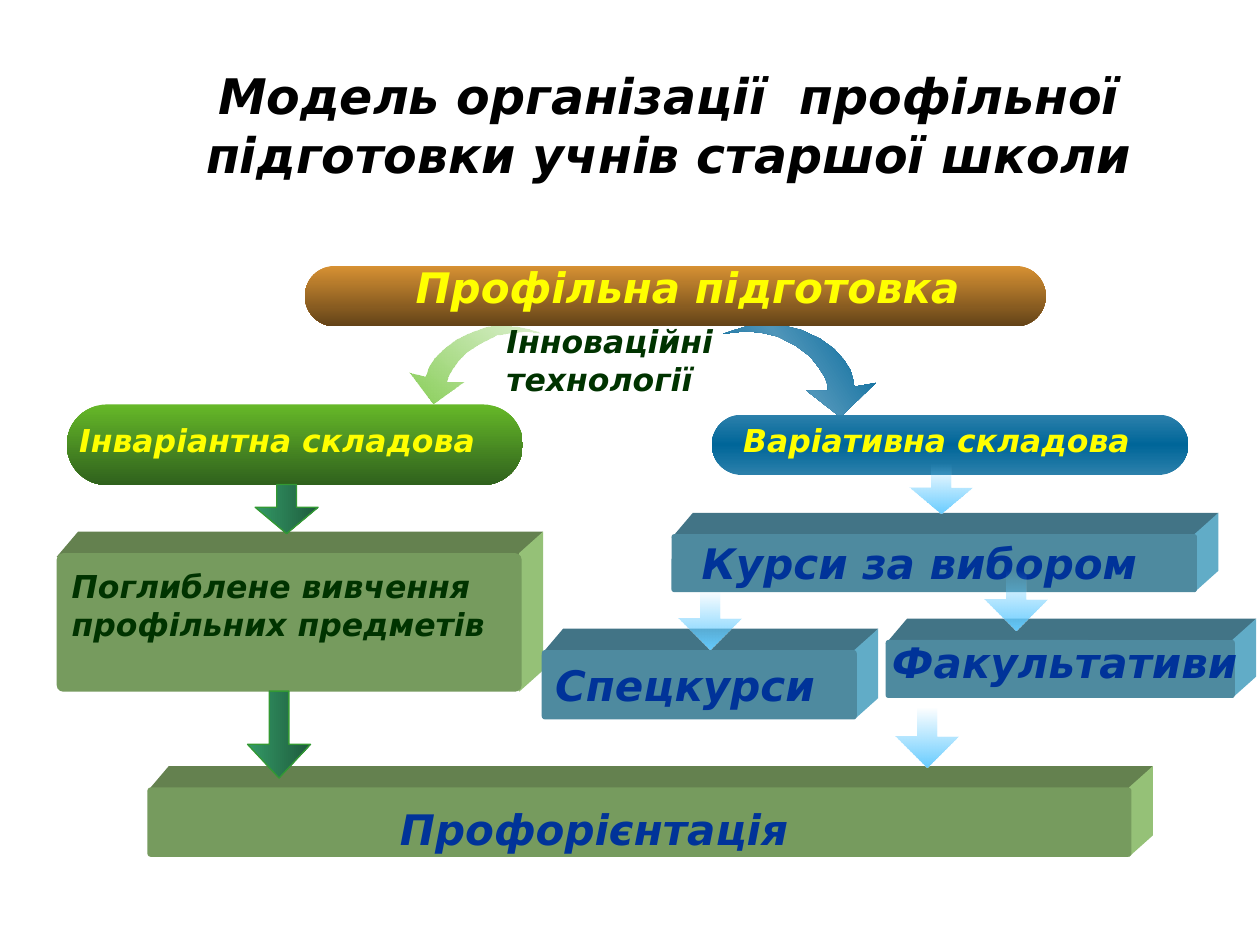
from dataclasses import dataclass
from typing import Optional

from lxml.etree import SubElement
from pptx import Presentation
from pptx.dml.color import RGBColor
from pptx.enum.shapes import MSO_SHAPE
from pptx.enum.text import MSO_ANCHOR, MSO_AUTO_SIZE, PP_ALIGN
from pptx.oxml.ns import qn
from pptx.util import Cm, Pt

CM_PER_UNIT = 2.54
DEPTH = 0.17
YELLOW, NAVY, FOREST = "FFFF00", "003399", "003300"
FONT = {"name": "DejaVu Sans", "bold": True, "italic": True}


@dataclass
class Gradient:
    stops: list
    angle: float


@dataclass
class Palette:
    front: str
    top: str
    side: str


@dataclass
class Block:
    area: tuple
    palette: Palette
    text: str = ""


@dataclass
class Pill:
    area: tuple
    fill: Gradient


@dataclass
class Label:
    area: tuple
    lines: list
    size: int
    color: str
    wrap: bool = False
    align: PP_ALIGN = PP_ALIGN.LEFT


@dataclass
class Arrow:
    area: tuple
    fill: Gradient
    outline: Optional[str] = None


@dataclass
class Curve:
    points: list
    fill: Gradient


GREEN = Palette("769B5E", "64814F", "95C177")
BLUE = Palette("4E8A9F", "427486", "61ACC7")
DARK_ARROW = Gradient([(0, "339966", 100), (100, "1E5B3D", 100)], 90)
LIGHT_ARROW = Gradient([(0, "66CCFF", 100), (100, "66CCFF", 0)], 0)

GUIDANCE = Block((1.17, 6.25, 7.81, 0.55), GREEN)
DEEP_STUDY = Block((0.45, 4.39, 3.69, 1.1), GREEN)
FACULTATIVE = Block((7.03, 5.08, 2.77, 0.46), BLUE)
ELECTIVES = Block((5.33, 4.24, 4.17, 0.46), BLUE)
SPECIAL = Block((4.3, 5.16, 2.5, 0.55), BLUE, "Спецкурси")

INVARIANT_PILL = Pill((0.53, 3.21, 3.62, 0.64),
                      Gradient([(0, "66B828", 100), (100, "2F611D", 100)], 90))
TRAINING_PILL = Pill((2.42, 2.11, 5.88, 0.48),
                     Gradient([(0, "D79133", 100), (100, "634318", 100)], 90))
VARIATIVE_PILL = Pill((5.65, 3.29, 3.78, 0.48), Gradient(
    [(0, "2C80AB", 100), (50, "006699", 100), (100, "2C80AB", 100)], 90))

LEFT_CURVE = Curve([
    (4.3, 2.65), (4.24, 2.64), (4.16, 2.63), (4.06, 2.64), (3.94, 2.66),
    (3.82, 2.72), (3.71, 2.79), (3.64, 2.86), (3.59, 2.93), (3.56, 2.98),
    (3.55, 3.02), (3.69, 3.02), (3.44, 3.2), (3.25, 2.95), (3.38, 2.98),
    (3.41, 2.9), (3.45, 2.84), (3.52, 2.77), (3.61, 2.7), (3.73, 2.64),
    (3.87, 2.59), (4, 2.58), (4.11, 2.59), (4.2, 2.61), (4.27, 2.63),
], Gradient([(0, "93D267", 32), (100, "88CE58", 100)], 129.2))
RIGHT_CURVE = Curve([
    (5.74, 2.65), (5.82, 2.64), (5.92, 2.63), (6.04, 2.64), (6.17, 2.67),
    (6.31, 2.74), (6.43, 2.83), (6.5, 2.92), (6.55, 3), (6.57, 3.06),
    (6.57, 3.1), (6.4, 3.1), (6.67, 3.31), (6.95, 3.04), (6.78, 3.07),
    (6.77, 3.01), (6.75, 2.94), (6.7, 2.86), (6.62, 2.77), (6.51, 2.69),
    (6.36, 2.62), (6.2, 2.58), (6.05, 2.58), (5.93, 2.59), (5.83, 2.62),
], Gradient([(0, "006699", 100), (50, "4F95B9", 100), (100, "006699", 100)], 147.1))

ITEMS = [
    GUIDANCE, INVARIANT_PILL, LEFT_CURVE, RIGHT_CURVE, TRAINING_PILL, VARIATIVE_PILL,
    Label((3.2, 2.03, 4.52, 0.51), ["Профільна підготовка"], 24, YELLOW),
    DEEP_STUDY,
    Label((0.47, 4.45, 3.78, 0.71), ["Поглиблене вивчення профільних предметів"],
          18, FOREST, wrap=True),
    Label((5.8, 3.29, 3.74, 0.4), ["Варіативна складова"], 18, YELLOW, wrap=True),
    Arrow((2.08, 3.79, 0.39, 0.5), DARK_ARROW, "339933"),
    Label((0.53, 3.29, 3.4, 0.4), ["Інваріантна складова"], 18, YELLOW),
    FACULTATIVE, ELECTIVES,
    Label((6.98, 5, 2.95, 0.51), ["Факультативи"], 24, NAVY),
    Label((5.47, 4.22, 3.69, 0.51), ["Курси за вибором"], 24, NAVY),
    Arrow((7.27, 3.63, 0.39, 0.5), LIGHT_ARROW),
    Arrow((7.83, 4.52, 0.47, 0.5), LIGHT_ARROW),
    Arrow((7.12, 5.61, 0.47, 0.5), LIGHT_ARROW),
    Label((3.92, 2.51, 2.02, 0.71), ["Інноваційні", "технології"], 18, FOREST),
    Arrow((1.87, 5.58, 0.69, 0.5), DARK_ARROW, "339933"),
    Label((2.2, 6.33, 5.03, 0.5), ["Профорієнтація"], 24, NAVY, True, PP_ALIGN.CENTER),
    SPECIAL,
    Arrow((5.4, 4.67, 0.47, 0.5), LIGHT_ARROW),
]


def lengths(values: tuple) -> list:
    return [Cm(value * CM_PER_UNIT) for value in values]


def paint(target, color: str) -> None:
    target.solid()
    target.fore_color.rgb = RGBColor.from_string(color)


def paint_gradient(shape, gradient: Gradient) -> None:
    shape.fill.gradient()
    element = shape.element.spPr.find(qn("a:gradFill"))
    for child in list(element):
        element.remove(child)
    element.set("rotWithShape", "1")
    stops = SubElement(element, qn("a:gsLst"))
    for position, color, opacity in gradient.stops:
        stop = SubElement(stops, qn("a:gs"), pos=str(position * 1000))
        tint = SubElement(stop, qn("a:srgbClr"), val=color)
        if opacity < 100:
            SubElement(tint, qn("a:alpha"), val=str(opacity * 1000))
    SubElement(element, qn("a:lin"), ang=str(round(gradient.angle * 60000)), scaled="0")


def finish(shape, fill, outline: Optional[str] = None) -> None:
    shape.shadow.inherit = False
    if isinstance(fill, Gradient):
        paint_gradient(shape, fill)
    else:
        paint(shape.fill, fill)
    if outline:
        paint(shape.line.fill, outline)
        shape.line.width = Pt(0.75)
    else:
        shape.line.fill.background()


def write(shape, lines: list, size: int, color: str, wrap: bool, align: PP_ALIGN,
          anchor: MSO_ANCHOR = MSO_ANCHOR.TOP) -> None:
    frame = shape.text_frame
    settings = {"word_wrap": wrap, "vertical_anchor": anchor,
                "auto_size": MSO_AUTO_SIZE.NONE}
    for name, value in settings.items():
        setattr(frame, name, value)
    for index, line in enumerate(lines):
        para = frame.add_paragraph() if index else frame.paragraphs[0]
        para.alignment = align
        span = para.add_run()
        span.text = line
        for name, value in {**FONT, "size": Pt(size)}.items():
            setattr(span.font, name, value)
        paint(span.font.fill, color)


def draw_polygon(page, points: list, fill) -> None:
    first, *rest = [lengths(point) for point in points]
    builder = page.shapes.build_freeform(*first, scale=1.0)
    builder.add_line_segments(rest, close=True)
    finish(builder.convert_to_shape(), fill)


def draw_rounded(page, area: tuple, fill, radius: float):
    box = page.shapes.add_shape(MSO_SHAPE.ROUNDED_RECTANGLE, *lengths(area))
    box.adjustments[0] = radius
    finish(box, fill)
    return box


def draw_block(page, block: Block) -> None:
    left, top, width, height = block.area
    right, bottom = left + width, top + height
    back, raised = right + DEPTH, top - DEPTH
    draw_polygon(page, [(left, top + 0.03), (left + DEPTH, raised), (back, raised),
                        (right, top + 0.03)], block.palette.top)
    draw_polygon(page, [(right - 0.02, top), (back, raised), (back, bottom - DEPTH),
                        (right - 0.02, bottom)], block.palette.side)
    box = draw_rounded(page, block.area, block.palette.front, 0.047)
    if block.text:
        write(box, [block.text], 24, NAVY, True, PP_ALIGN.LEFT, MSO_ANCHOR.MIDDLE)


def draw_arrow(page, arrow: Arrow) -> None:
    shape = page.shapes.add_shape(MSO_SHAPE.LEFT_ARROW, *lengths(arrow.area))
    shape.rotation = 270
    shape.adjustments[0], shape.adjustments[1] = 0.312, 0.536
    finish(shape, arrow.fill, arrow.outline)


def draw_label(page, label: Label) -> None:
    box = page.shapes.add_textbox(*lengths(label.area))
    write(box, label.lines, label.size, label.color, label.wrap, label.align)


def draw_title(page) -> None:
    title = page.shapes.title
    title.left, title.top, title.width, title.height = lengths((1.17, 0.47, 8.27, 1.03))
    write(title, ["Модель організації  профільної підготовки учнів старшої школи"],
          28, "000000", True, PP_ALIGN.CENTER)


def main() -> None:
    deck = Presentation()
    deck.slide_width, deck.slide_height = lengths((10, 7.5))
    page = deck.slides.add_slide(deck.slide_layouts[5])
    draw_title(page)
    painters = {
        Block: draw_block, Arrow: draw_arrow, Label: draw_label,
        Pill: lambda page, pill: draw_rounded(page, pill.area, pill.fill, 0.5),
        Curve: lambda page, curve: draw_polygon(page, curve.points, curve.fill),
    }
    for item in ITEMS:
        painters[type(item)](page, item)
    deck.save("out.pptx")


if __name__ == "__main__":
    main()
